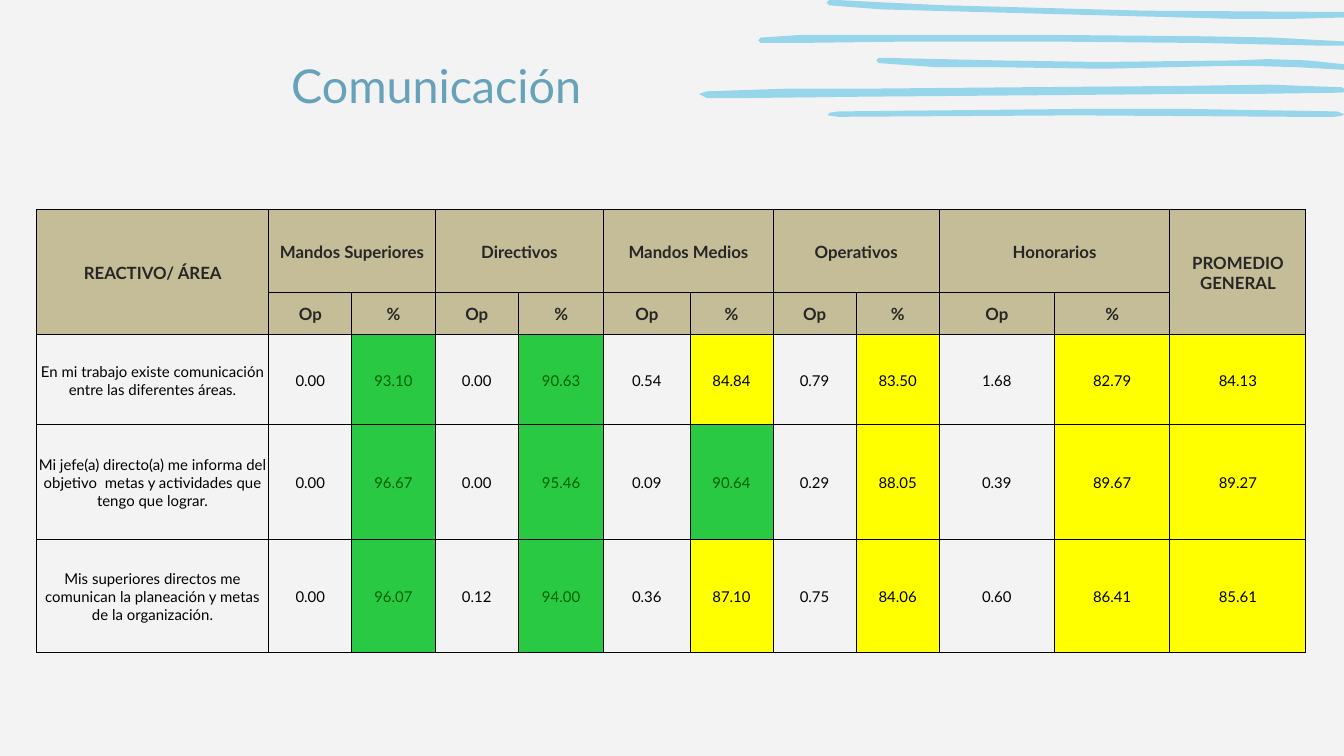
from lxml import etree
from pptx import Presentation
from pptx.dml.color import RGBColor
from pptx.enum.text import MSO_ANCHOR, PP_ALIGN
from pptx.oxml.ns import qn
from pptx.util import Cm, Pt

MIDDLE = MSO_ANCHOR.MIDDLE
CENTER = PP_ALIGN.CENTER
RIGHT = PP_ALIGN.RIGHT

FONT = "Lato"
BLACK = "000000"
HEADER_FILL, HEADER_TEXT = "C4BD97", "262626"
GOOD_FILL, GOOD_TEXT = "29C944", "006100"
FAIR_FILL = "FFFF00"
GOOD_FROM = 90

COLUMN_WIDTHS = [4.39, 1.57, 1.57, 1.58, 1.61, 1.63, 1.57, 1.57, 1.57, 2.18, 2.18, 2.57]
ROW_HEIGHTS = [1.57, 0.69, 1.7, 2.18, 2.13]
GROUPS = ["Mandos Superiores", "Directivos", "Mandos Medios", "Operativos", "Honorarios"]
LAST_COLUMN = len(COLUMN_WIDTHS) - 1
RESULTS = [
    ("En mi trabajo existe comunicación entre las diferentes áreas.",
     "0.00 93.10 0.00 90.63 0.54 84.84 0.79 83.50 1.68 82.79 84.13"),
    ("Mi jefe(a) directo(a) me informa del objetivo  metas y actividades que tengo que lograr.",
     "0.00 96.67 0.00 95.46 0.09 90.64 0.29 88.05 0.39 89.67 89.27"),
    ("Mis superiores directos me comunican la planeación y metas de la organización.",
     "0.00 96.07 0.12 94.00 0.36 87.10 0.75 84.06 0.60 86.41 85.61"),
]

# Outlines of the brush strokes, in hundredths of an inch
STROKE_UNIT = Cm(2.54) / 100
STROKES = [
    [(965, 87), (993, 87), (999, 86), (1000, 85), (995, 83), (877, 81), (814, 81),
     (720, 81.5), (624, 83), (617, 84), (616, 86), (624, 87), (792, 86), (809, 86)],
    [(556, 73), (644, 72), (765, 71), (883, 70), (931, 70), (999, 69), (1002, 67),
     (998, 65), (944, 63), (880, 64), (761, 65), (647, 66), (586, 66), (526, 68),
     (520, 70), (526, 73)],
    [(1001, 52), (1003, 50), (1002, 48), (973, 45), (943, 44), (919, 45), (830, 46),
     (810, 46), (743, 45), (700, 44), (654, 43), (652, 45), (654, 47), (697, 49.5),
     (741, 50), (808, 51), (829, 51), (915, 49), (929, 49), (965, 50)],
    [(983, 34), (1002, 34), (1003, 32), (1002, 31), (948, 28), (893, 27), (784, 26),
     (720, 26), (626, 26), (596, 26.5), (566, 28), (564, 30), (566, 32), (593, 32),
     (675, 31), (784, 31), (893, 32)],
    [(963, 14), (1002, 13), (1003, 11), (1002, 9), (852, 8), (703, 4), (660, 2),
     (622, 0), (617, 0), (615, 2), (617, 4), (655, 7), (692, 8), (766, 10), (916, 14)],
]


def rgb(color):
    return RGBColor.from_string(color)


def add_stroke(slide, points):
    builder = slide.shapes.build_freeform(*points[0], scale=STROKE_UNIT)
    builder.add_line_segments(points[1:], close=True)
    stroke = builder.convert_to_shape()
    stroke.shadow.inherit = False
    stroke.fill.solid()
    stroke.fill.fore_color.rgb = rgb("97D5EA")
    stroke.line.fill.background()


def write(frame, text, size, color, align, bold=False):
    para = frame.paragraphs[0]
    para.alignment = align
    span = para.add_run()
    span.text = text
    span.font.name = FONT
    span.font.size = Pt(size)
    span.font.bold = bold
    span.font.color.rgb = rgb(color)


def add_title(slide, text):
    box = slide.shapes.add_textbox(Cm(3.28), Cm(0.81), Cm(7.95), Cm(1.57))
    frame = box.text_frame
    frame.word_wrap = True
    frame.vertical_anchor = MIDDLE
    write(frame, text, 25, "66A2B9", RIGHT)


def add_borders(cell):
    properties = cell._tc.get_or_add_tcPr()
    for side in ("a:lnL", "a:lnR", "a:lnT", "a:lnB"):
        line = etree.SubElement(properties, qn(side), w=str(Pt(0.5)))
        fill = etree.SubElement(line, qn("a:solidFill"))
        etree.SubElement(fill, qn("a:srgbClr"), val=BLACK)


def format_cell(cell, fill=None):
    cell.vertical_anchor = MIDDLE
    cell.margin_left = cell.margin_right = cell.margin_top = Cm(0.03)
    cell.margin_bottom = 0
    add_borders(cell)
    if fill:
        cell.fill.solid()
        cell.fill.fore_color.rgb = rgb(fill)
    else:
        cell.fill.background()


def fill_header(table):
    for row in range(2):
        for column in range(LAST_COLUMN + 1):
            format_cell(table.cell(row, column), HEADER_FILL)
    labels = [(0, 0, "REACTIVO/ ÁREA"), (0, LAST_COLUMN, "PROMEDIO GENERAL")]
    for column in (0, LAST_COLUMN):
        table.cell(0, column).merge(table.cell(1, column))
    for index, group in enumerate(GROUPS):
        column = 1 + 2 * index
        table.cell(0, column).merge(table.cell(0, column + 1))
        labels += [(0, column, group), (1, column, "Op"), (1, column + 1, "%")]
    for row, column, label in labels:
        write(table.cell(row, column).text_frame, label, 9, HEADER_TEXT, CENTER, bold=True)


def result_colors(column, text):
    """Fill and text colour: only percentages and the average are rated."""
    if column == 0 or (column % 2 and column != LAST_COLUMN):
        return None, BLACK
    if float(text) >= GOOD_FROM:
        return GOOD_FILL, GOOD_TEXT
    return FAIR_FILL, BLACK


def fill_results(table):
    for row, (statement, values) in enumerate(RESULTS, start=2):
        for column, text in enumerate([statement, *values.split()]):
            cell = table.cell(row, column)
            fill, color = result_colors(column, text)
            format_cell(cell, fill)
            write(cell.text_frame, text, 8, color, CENTER)


def add_results_table(slide):
    frame = slide.shapes.add_table(
        len(ROW_HEIGHTS), len(COLUMN_WIDTHS), Cm(0.69), Cm(3.96),
        Cm(sum(COLUMN_WIDTHS)), Cm(sum(ROW_HEIGHTS)))
    table = frame.table
    table.first_row = False
    table.horz_banding = False
    for column, width in zip(table.columns, COLUMN_WIDTHS):
        column.width = Cm(width)
    for row, height in zip(table.rows, ROW_HEIGHTS):
        row.height = Cm(height)
    fill_header(table)
    fill_results(table)


def main():
    deck = Presentation()
    deck.slide_width = Cm(25.4)
    deck.slide_height = Cm(14.29)
    slide = deck.slides.add_slide(deck.slide_layouts[6])
    slide.background.fill.solid()
    slide.background.fill.fore_color.rgb = rgb("F3F3F3")
    for points in STROKES:
        add_stroke(slide, points)
    add_title(slide, "Comunicación")
    add_results_table(slide)
    deck.save("out.pptx")


if __name__ == "__main__":
    main()
